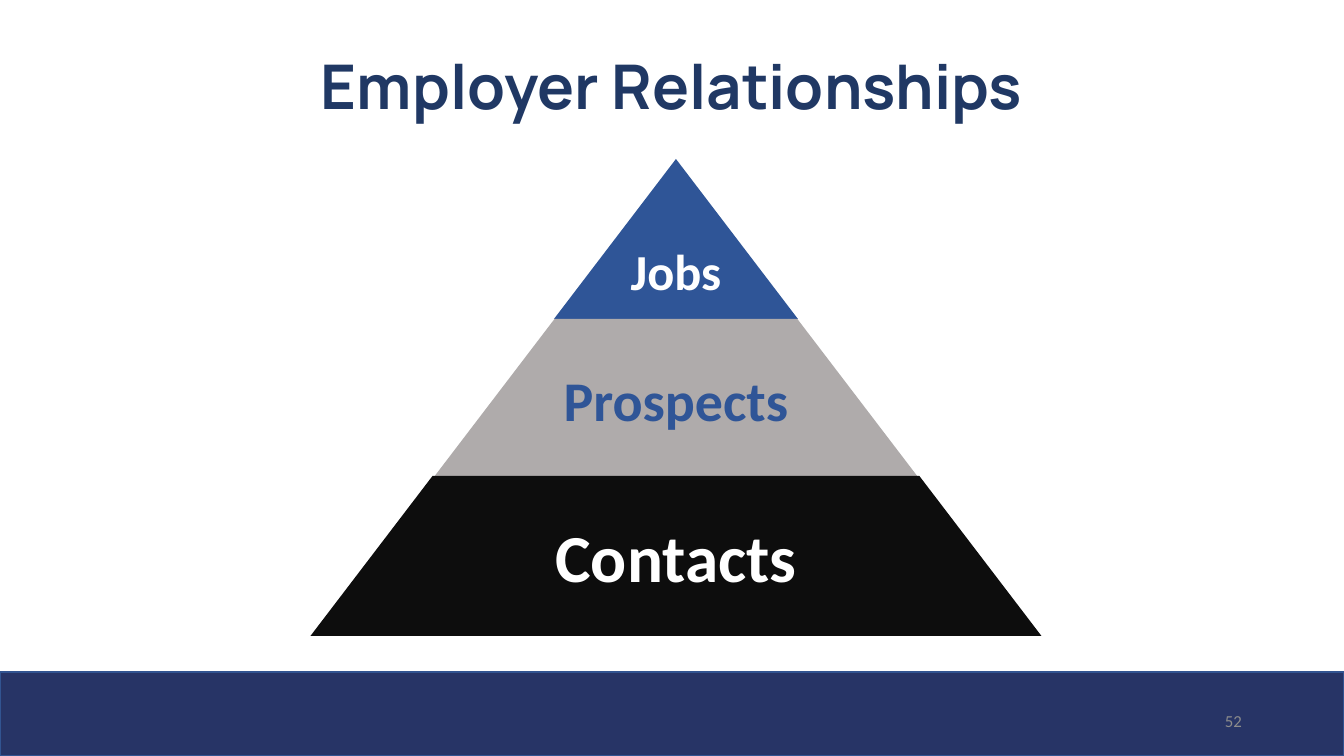
from pptx import Presentation
from pptx.dml.color import RGBColor
from pptx.enum.shapes import MSO_SHAPE
from pptx.enum.text import MSO_ANCHOR, PP_ALIGN
from pptx.util import Emu, Pt

SLOPE = 0.763
MID = 676
TIER = 160


def px(n):
    return Emu(round(n * 914400 / 100.8))


def color(code):
    return RGBColor.from_string(code)


def shape(slide, kind, left, top, width, height, fill, line=None):
    item = slide.shapes.add_shape(kind, px(left), px(top), px(width), px(height))
    item.shadow.inherit = False
    item.fill.solid()
    item.fill.fore_color.rgb = color(fill)
    if line:
        item.line.color.rgb = color(line)
        item.line.width = Pt(1)
    else:
        item.line.fill.background()
    return item


def label(slide, text, left, top, width, height, size, ink,
          face="Calibri", bold=True, align=PP_ALIGN.CENTER, inset=6, space=1.0):
    box = slide.shapes.add_textbox(px(left), px(top), px(width), px(height))
    frame = box.text_frame
    frame.word_wrap = True
    frame.vertical_anchor = MSO_ANCHOR.MIDDLE
    frame.margin_left = frame.margin_right = px(inset)
    frame.margin_top = frame.margin_bottom = px(5)
    para = frame.paragraphs[0]
    para.alignment = align
    para.line_spacing = space
    run = para.add_run()
    run.text = text
    run.font.name = face
    run.font.size = Pt(size)
    run.font.bold = bold
    run.font.color.rgb = color(ink)


def tier(slide, text, top, width, fill, span, drop, size, ink):
    part = shape(slide, MSO_SHAPE.TRAPEZOID, MID - width / 2, top, width, TIER, fill)
    part.adjustments[0] = SLOPE
    label(slide, text, MID - span / 2, top + drop, span, TIER, size, ink)


def main():
    deck = Presentation()
    deck.slide_width = px(1344)
    deck.slide_height = px(756)
    slide = deck.slides.add_slide(deck.slide_layouts[6])

    shape(slide, MSO_SHAPE.RECTANGLE, 0, 672, 1344, 84, "273466", "325491")
    label(slide, "52", 950, 701, 302, 40, 12, "8C8C8C",
          bold=False, align=PP_ALIGN.RIGHT, inset=10)
    label(slide, "Employer Relationships", 92, 17, 1160, 146, 44, "203864",
          face="Manrope", inset=10, space=0.9)

    tiers = [
        ("Jobs", 159, 244, "2F5597", 244, 31, 36, "FFFFFF"),
        ("Prospects", 319, 487, "AFABAB", 317, 0, 40, "2F5597"),
        ("Contacts", 476, 731, "0D0D0D", 475, 0, 48, "FFFFFF"),
    ]
    for row in tiers:
        tier(slide, *row)

    deck.save("out.pptx")


if __name__ == "__main__":
    main()
